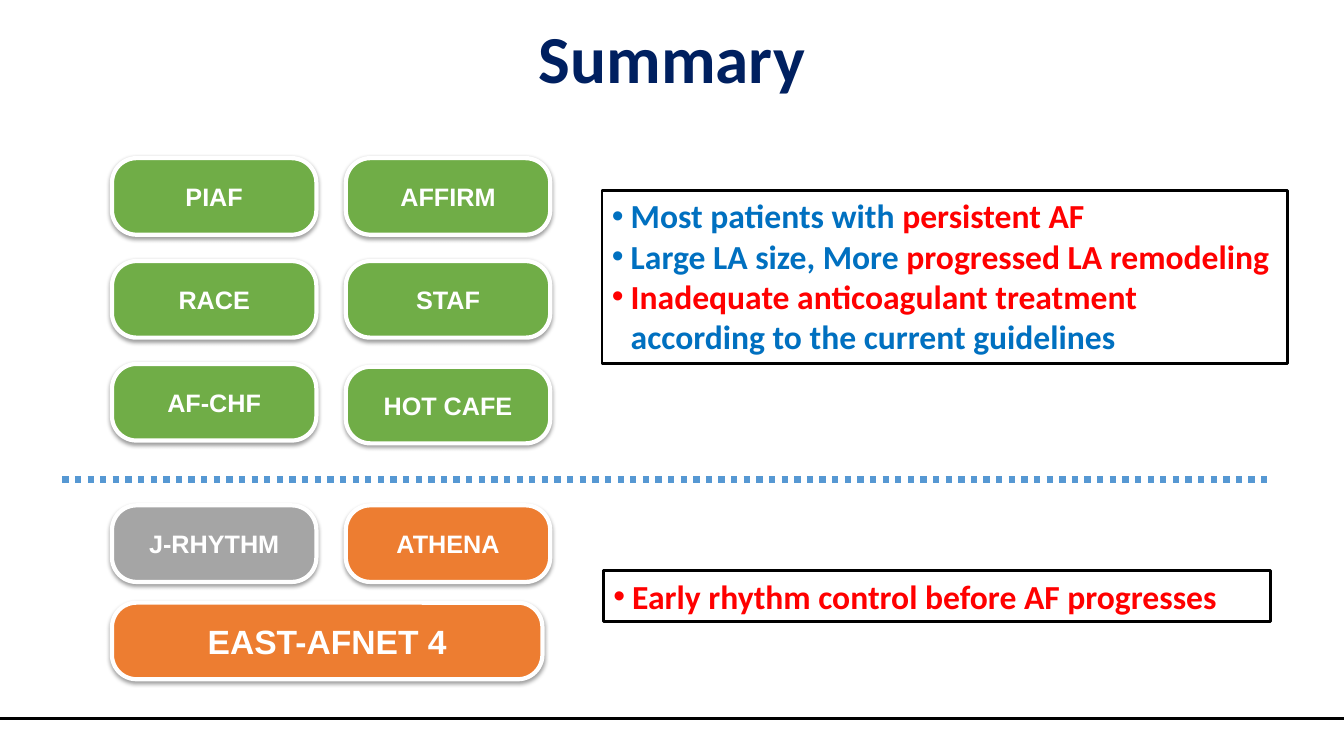
from lxml.etree import SubElement
from pptx import Presentation
from pptx.dml.color import RGBColor
from pptx.enum.dml import MSO_LINE
from pptx.enum.shapes import MSO_CONNECTOR, MSO_SHAPE
from pptx.enum.text import MSO_ANCHOR, PP_ALIGN
from pptx.oxml.ns import qn
from pptx.util import Pt

COLOURS = {
    "white": "FFFFFF", "black": "000000", "navy": "002060", "green": "70AD47",
    "grey": "A5A5A5", "orange": "ED7D31", "blue": "0070C0", "red": "FF0000",
    "divider": "5698D3",
}
SLIDE_WIDTH, SLIDE_HEIGHT = 960, 540
PILL_WIDTH, PILL_HEIGHT = 146, 54.7
COLUMN_PITCH, ROW_PITCH = 167, 73.5


def colour(name):
    """Return the named colour."""
    return RGBColor.from_string(COLOURS[name])


def set_font(font, face, size, colour_name=None):
    """Make a font bold with the given face, size and optional colour."""
    font.name, font.size, font.bold = face, Pt(size), True
    if colour_name:
        font.color.rgb = colour(colour_name)


def add_title(slide, text, left, top, width, height):
    """Place the title placeholder and fill it."""
    title = slide.shapes.title
    title.left, title.top, title.width, title.height = map(Pt, (left, top, width, height))
    title.fill.solid()
    title.fill.fore_color.rgb = colour("white")
    title.text_frame.text = text
    title.text_frame.vertical_anchor = MSO_ANCHOR.MIDDLE
    paragraph = title.text_frame.paragraphs[0]
    paragraph.alignment = PP_ALIGN.CENTER
    set_font(paragraph.font, "Calibri", 48, "navy")


def add_rule(slide, left, right, y, colour_name, weight, dash=None):
    """Draw a horizontal line."""
    line = slide.shapes.add_connector(MSO_CONNECTOR.STRAIGHT, Pt(left), Pt(y), Pt(right), Pt(y))
    line.line.color.rgb = colour(colour_name)
    line.line.width = Pt(weight)
    if dash:
        line.line.dash_style = dash
    SubElement(line._element.spPr, qn("a:effectLst"))


def add_shadow(shape):
    """Give a shape a soft shadow straight below it."""
    shape.shadow.inherit = False
    effects = shape._element.spPr.find(qn("a:effectLst"))
    shadow = SubElement(effects, qn("a:outerShdw"), blurRad=str(Pt(3.1)), dist=str(Pt(1.6)),
                        dir="5400000", algn="ctr", rotWithShape="0")
    tint = SubElement(shadow, qn("a:srgbClr"), val=COLOURS["black"])
    SubElement(tint, qn("a:alpha"), val="38000")


def add_pill(slide, text, left, top, fill, width=PILL_WIDTH, size=18):
    """Draw one rounded trial label."""
    pill = slide.shapes.add_shape(MSO_SHAPE.ROUNDED_RECTANGLE, Pt(left), Pt(top), Pt(width), Pt(PILL_HEIGHT))
    pill.adjustments[0] = 0.32
    pill.fill.solid()
    pill.fill.fore_color.rgb = colour(fill)
    pill.line.color.rgb = colour("white")
    pill.line.width = Pt(3)
    add_shadow(pill)
    pill.text_frame.text = text
    pill.text_frame.vertical_anchor = MSO_ANCHOR.MIDDLE
    paragraph = pill.text_frame.paragraphs[0]
    paragraph.alignment = PP_ALIGN.CENTER
    set_font(paragraph.font, "Arial", size, "white")


def add_earlier_trials(slide, left, top):
    """Draw the grid of earlier trials, its last label slightly lower."""
    rows = [("PIAF", "AFFIRM"), ("RACE", "STAF"), ("AF-CHF", "HOT CAFE")]
    for row, names in enumerate(rows):
        for column, name in enumerate(names):
            drop = 2 if name == "HOT CAFE" else 0
            add_pill(slide, name, left + column * COLUMN_PITCH, top + row * ROW_PITCH + drop, "green")


def add_later_trials(slide, left, top):
    """Draw the later trials, with the wide one below."""
    add_pill(slide, "J-RHYTHM", left, top, "grey")
    add_pill(slide, "ATHENA", left + COLUMN_PITCH, top, "orange")
    add_pill(slide, "EAST-AFNET 4", left, top + 69.5, "orange", width=307.5, size=24)


def add_bullet(paragraph, colour_name):
    """Give a paragraph a coloured bullet and a hanging indent."""
    properties = paragraph._p.get_or_add_pPr()
    properties.set("marL", str(Pt(13.5)))
    properties.set("indent", str(-Pt(13.5)))
    bullet_colour = SubElement(properties, qn("a:buClr"))
    SubElement(bullet_colour, qn("a:srgbClr"), val=COLOURS[colour_name])
    SubElement(properties, qn("a:buFont"), typeface="Arial")
    SubElement(properties, qn("a:buChar"), char="•")


def add_findings(slide, findings, left, top, width, height):
    """Draw a framed list whose findings are lists of text and colour."""
    box = slide.shapes.add_textbox(Pt(left), Pt(top), Pt(width), Pt(height))
    box.fill.solid()
    box.fill.fore_color.rgb = colour("white")
    box.line.color.rgb = colour("black")
    box.line.width = Pt(2)
    frame = box.text_frame
    frame.word_wrap = True
    frame.margin_right = Pt(9)
    for index, parts in enumerate(findings):
        paragraph = frame.add_paragraph() if index else frame.paragraphs[0]
        add_bullet(paragraph, parts[0][1])
        set_font(paragraph.font, "Calibri", 24)
        for text, colour_name in parts:
            run = paragraph.add_run()
            run.text = text
            run.font.color.rgb = colour(colour_name)


def main():
    """Build and save the summary slide."""
    presentation = Presentation()
    presentation.slide_width, presentation.slide_height = Pt(SLIDE_WIDTH), Pt(SLIDE_HEIGHT)
    slide = presentation.slides.add_slide(presentation.slide_layouts[5])
    add_title(slide, "Summary", 0, 0, SLIDE_WIDTH, 80.6)
    add_rule(slide, 0, SLIDE_WIDTH, 513.2, "black", 1.75)
    add_earlier_trials(slide, 80, 113)
    add_findings(slide, [
        [("Most patients with ", "blue"), ("persistent AF", "red")],
        [("Large LA size, More ", "blue"), ("progressed LA remodeling", "red")],
        [("Inadequate anticoagulant treatment", "red"),
         (" according to the current guidelines", "blue")],
    ], 430, 136, 490, 123.7)
    add_rule(slide, 44.5, 908, 342.5, "divider", 4.5, MSO_LINE.ROUND_DOT)
    add_later_trials(slide, 80, 361)
    add_findings(slide, [[("Early rhythm control before AF progresses", "red")]], 431, 407.5, 476.6, 36.3)
    presentation.save("out.pptx")


if __name__ == "__main__":
    main()
